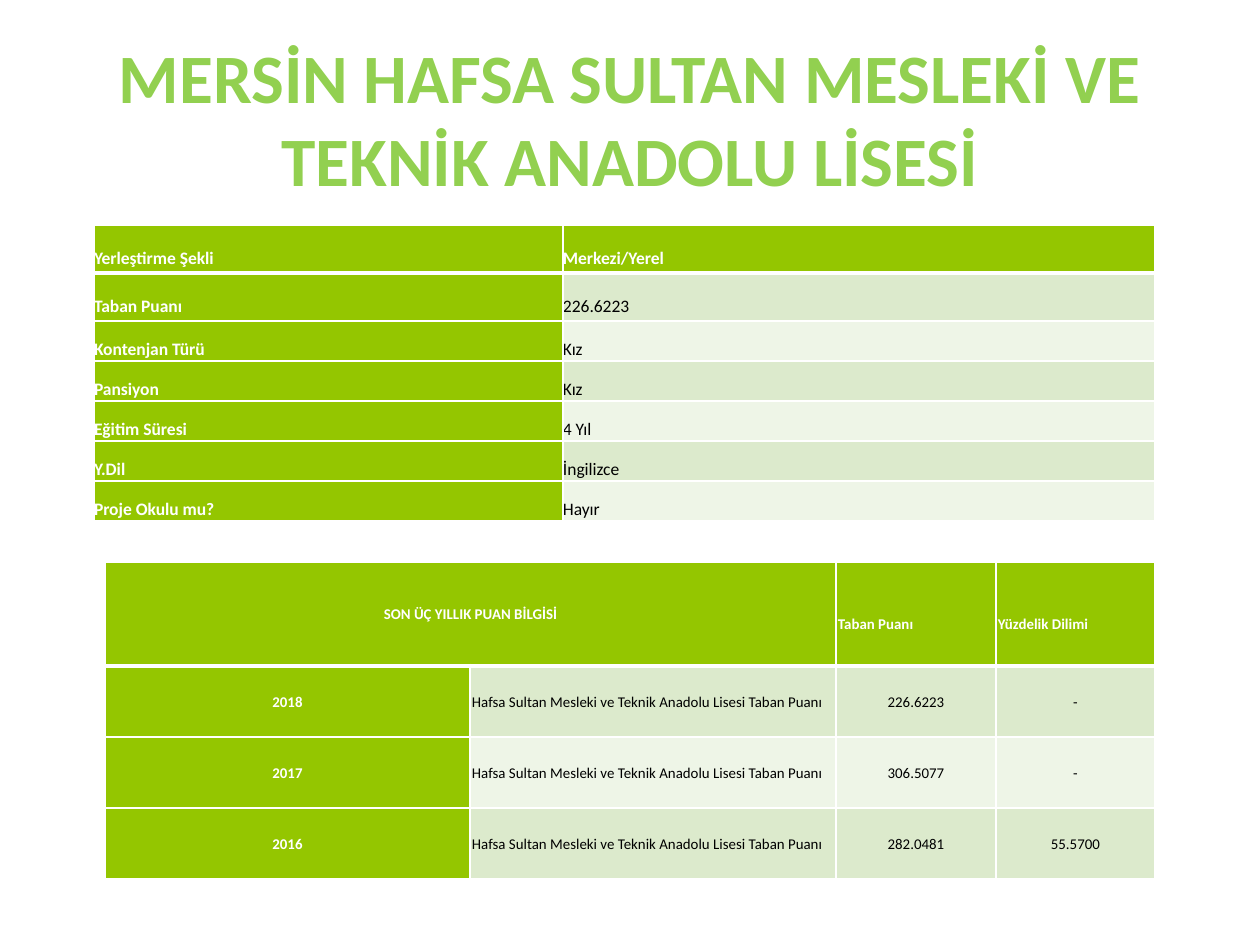
from lxml import etree
from pptx import Presentation
from pptx.dml.color import RGBColor
from pptx.enum.text import MSO_ANCHOR, PP_ALIGN
from pptx.oxml.ns import qn
from pptx.util import Emu, Pt

LEFT, CENTER = PP_ALIGN.LEFT, PP_ALIGN.CENTER
MIDDLE, BOTTOM = MSO_ANCHOR.MIDDLE, MSO_ANCHOR.BOTTOM
FONT = "Calibri"
COLORS = {
    "title": "92D050",
    "green": "94C600",
    "band_dark": "DCEACC",
    "band_light": "EEF5E7",
    "white": "FFFFFF",
    "black": "000000",
}

# Content
TITLE = "MERSİN HAFSA SULTAN MESLEKİ VE TEKNİK ANADOLU LİSESİ"
SCORE_LABEL = "Hafsa Sultan Mesleki ve Teknik Anadolu Lisesi Taban Puanı"
SCHOOL_ROWS = [
    ("Yerleştirme Şekli", "Merkezi/Yerel"),
    ("Taban Puanı", "226.6223"),
    ("Kontenjan Türü", "Kız"),
    ("Pansiyon", "Kız"),
    ("Eğitim Süresi", "4 Yıl"),
    ("Y.Dil", "İngilizce"),
    ("Proje Okulu mu?", "Hayır"),
]
SCORE_ROWS = [
    ("SON ÜÇ YILLIK PUAN BİLGİSİ", "", "Taban Puanı", "Yüzdelik Dilimi"),
    ("2018", SCORE_LABEL, "226.6223", "-"),
    ("2017", SCORE_LABEL, "306.5077", "-"),
    ("2016", SCORE_LABEL, "282.0481", "55.5700"),
]


def px(value):
    return Emu(round(value * 914400 / 126))


def style_text(paragraph, size, color, bold, align):
    paragraph.alignment = align
    for span in paragraph.runs:
        span.font.name = FONT
        span.font.size = Pt(size)
        span.font.bold = bold
        span.font.color.rgb = RGBColor.from_string(COLORS[color])


def set_borders(cell, widths):
    """Draw white edges; widths are points for left, right, top, bottom."""
    properties = cell._tc.get_or_add_tcPr()
    for index, (edge, width) in enumerate(zip("LRTB", widths)):
        line = etree.Element(qn(f"a:ln{edge}"), w=str(Pt(width)))
        fill = etree.SubElement(line, qn("a:solidFill"))
        etree.SubElement(fill, qn("a:srgbClr"), val=COLORS["white"])
        properties.insert(index, line)


def add_green_table(page, rows, left, top, widths, heights, size, anchor,
                    spacing, side, pads, aligns):
    frame = page.shapes.add_table(len(rows), len(widths), px(left), px(top),
                                  px(sum(widths)), px(sum(heights)))
    table = frame.table
    for column, width in zip(table.columns, widths):
        column.width = px(width)
    for r, values in enumerate(rows):
        table.rows[r].height = px(heights[r])
        band = "band_dark" if r % 2 else "band_light"
        for c, value in enumerate(values):
            cell = table.cell(r, c)
            heading = r == 0 or c == 0
            cell.fill.solid()
            cell.fill.fore_color.rgb = RGBColor.from_string(
                COLORS["green" if heading else band])
            set_borders(cell, (1, 1, 3 if r == 1 else 1, 3 if r == 0 else 1))
            cell.vertical_anchor = anchor
            cell.margin_left = cell.margin_right = px(side)
            cell.margin_top = cell.margin_bottom = px(pads[r])
            para = cell.text_frame.paragraphs[0]
            para.text = value
            para.line_spacing = spacing
            style_text(para, size, "white" if heading else "black", heading,
                       LEFT if r == 0 and c else aligns[c])
    return table


deck = Presentation()
deck.slide_width, deck.slide_height = px(1260), px(945)
page = deck.slides.add_slide(deck.slide_layouts[6])

# Title
box = page.shapes.add_textbox(px(63), px(38), px(1134), px(158))
box.text_frame.word_wrap = True
box.text_frame.vertical_anchor = MIDDLE
box.text_frame.text = TITLE
style_text(box.text_frame.paragraphs[0], 39.6, "title", True, CENTER)

# School facts
add_green_table(page, SCHOOL_ROWS, 94, 225, [469, 592], [48] * 2 + [40] * 5,
                10, BOTTOM, 1.07, 0, [4] * 2 + [1] * 5, [LEFT, LEFT])

# Scores of the last three years
scores = add_green_table(page, SCORE_ROWS, 105, 562, [365, 366, 160, 159],
                         [104] + [71] * 3, 8.5, MIDDLE, Pt(11.2), 2, [10] * 4,
                         [CENTER, LEFT, CENTER, CENTER])
scores.cell(0, 0).merge(scores.cell(0, 1))
for c in (2, 3):  # these two headings sit a little below the middle
    scores.cell(0, c).margin_top = px(30)

deck.save("out.pptx")
